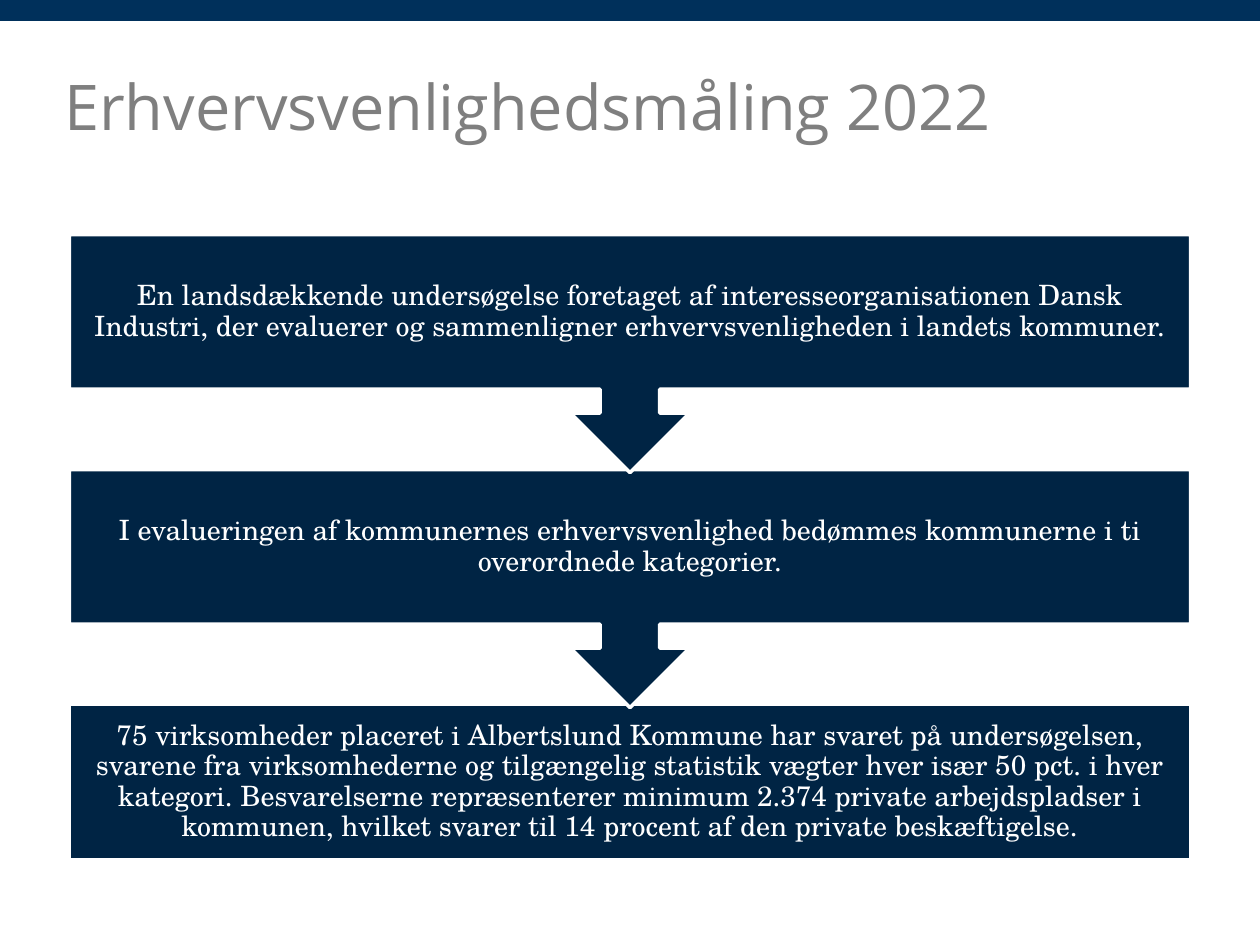
"""Build the slide on the 2022 business-friendliness survey."""
from pptx import Presentation
from pptx.dml.color import RGBColor
from pptx.enum.shapes import MSO_SHAPE
from pptx.enum.text import MSO_ANCHOR, PP_ALIGN
from pptx.util import Pt

RECTANGLE = MSO_SHAPE.RECTANGLE
CALLOUT = MSO_SHAPE.DOWN_ARROW_CALLOUT
LEFT, CENTER = PP_ALIGN.LEFT, PP_ALIGN.CENTER
TOP, MIDDLE = MSO_ANCHOR.TOP, MSO_ANCHOR.MIDDLE

WHITE = RGBColor(0xFF, 0xFF, 0xFF)
GREY = RGBColor(0x7F, 0x7F, 0x7F)
BAR_BLUE = RGBColor(0x00, 0x30, 0x5B)
NAVY = RGBColor(0x00, 0x24, 0x44)

STEP_LEFT, STEP_TOP, STEP_WIDTH = 39.6, 134, 640.8
STEP_PITCH, BOX_HEIGHT, CALLOUT_HEIGHT = 134.3, 88.5, 136.1

STEPS = (
    "En landsdækkende undersøgelse foretaget af interesseorganisationen Dansk "
    "Industri, der evaluerer og sammenligner erhvervsvenligheden i landets kommuner.",
    "I evalueringen af kommunernes erhvervsvenlighed bedømmes kommunerne i ti "
    "overordnede kategorier.",
    "75 virksomheder placeret i Albertslund Kommune har svaret på undersøgelsen, "
    "svarene fra virksomhederne og tilgængelig statistik vægter hver især 50 pct. "
    "i hver kategori. Besvarelserne repræsenterer minimum 2.374 private "
    "arbejdspladser i kommunen, hvilket svarer til 14 procent af den private "
    "beskæftigelse.",
)


def write_text(shape, text, *, font, size, color, align=LEFT, anchor=TOP,
               inset=0, spacing=1.0):
    frame = shape.text_frame
    frame.word_wrap = True
    frame.vertical_anchor = anchor
    frame.margin_left = frame.margin_right = Pt(inset)
    frame.margin_top = frame.margin_bottom = Pt(inset)
    paragraph = frame.paragraphs[0]
    paragraph.text = text
    paragraph.alignment = align
    paragraph.line_spacing = spacing
    paragraph.font.name = font
    paragraph.font.size = Pt(size)
    paragraph.font.color.rgb = color


class SlideBuilder:
    heading_font = "Open Sans"
    body_font = "TeX Gyre Schola"

    def __init__(self, slide):
        self.slide = slide

    def block(self, kind, left, top, width, height, fill, outline=None):
        shape = self.slide.shapes.add_shape(
            kind, Pt(left), Pt(top), Pt(width), Pt(height))
        shape.shadow.inherit = False
        shape.fill.solid()
        shape.fill.fore_color.rgb = fill
        if outline is None:
            shape.line.fill.background()
        else:
            shape.line.color.rgb = outline
            shape.line.width = Pt(2)
        return shape

    def title(self, text):
        box = self.slide.shapes.add_textbox(Pt(36.7), Pt(46), Pt(643.7), Pt(87.8))
        write_text(box, text, font=self.heading_font, size=36, color=GREY,
                   spacing=0.83)

    def step(self, index, text, is_last):
        kind, height = (RECTANGLE, BOX_HEIGHT) if is_last else (CALLOUT, CALLOUT_HEIGHT)
        shape = self.block(kind, STEP_LEFT, STEP_TOP + index * STEP_PITCH,
                           STEP_WIDTH, height, NAVY, WHITE)
        write_text(shape, text, font=self.body_font, size=16, color=WHITE,
                   align=CENTER, anchor=MIDDLE, inset=9, spacing=0.9)


def main():
    presentation = Presentation()
    presentation.slide_width, presentation.slide_height = Pt(720), Pt(540)
    slide = presentation.slides.add_slide(presentation.slide_layouts[6])
    builder = SlideBuilder(slide)
    builder.block(RECTANGLE, 0, 0, 720, 12, BAR_BLUE)
    builder.title("Erhvervsvenlighedsmåling 2022")
    last = len(STEPS) - 1
    for index in range(last, -1, -1):
        builder.step(index, STEPS[index], index == last)
    presentation.save("out.pptx")


if __name__ == "__main__":
    main()
